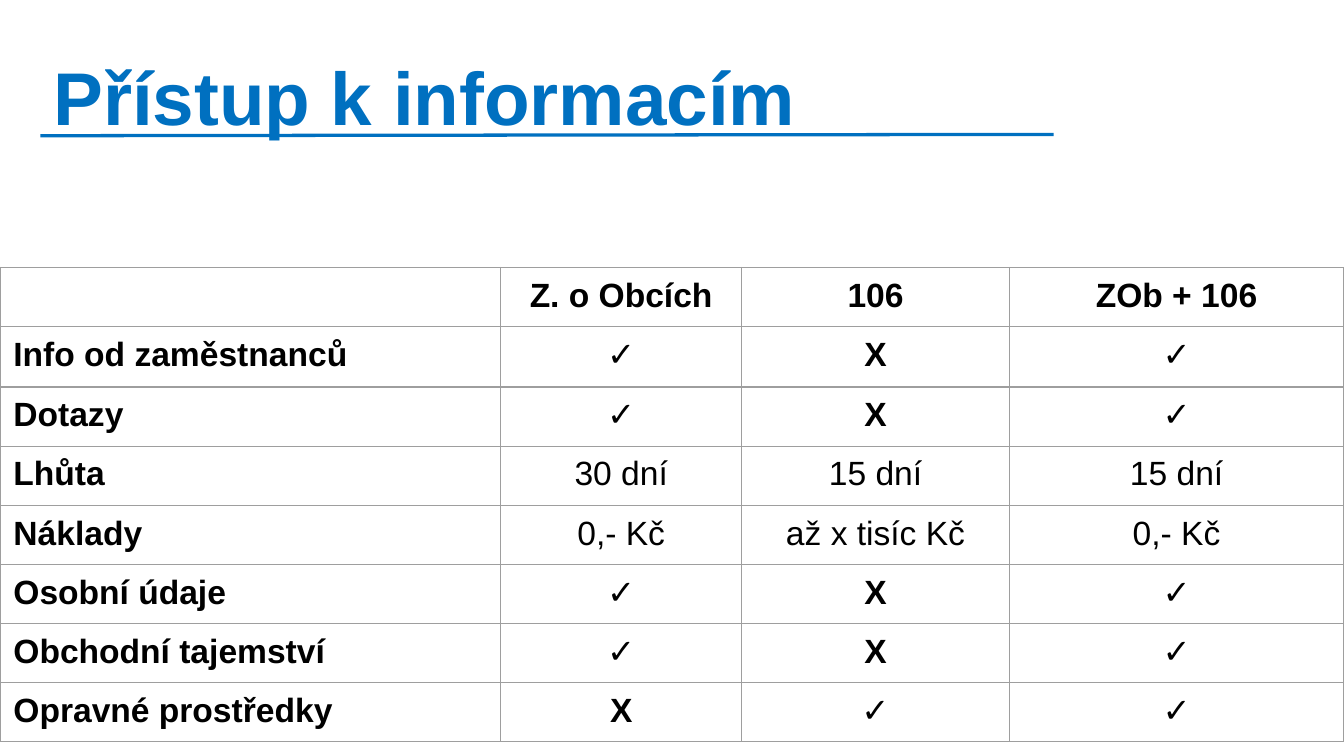
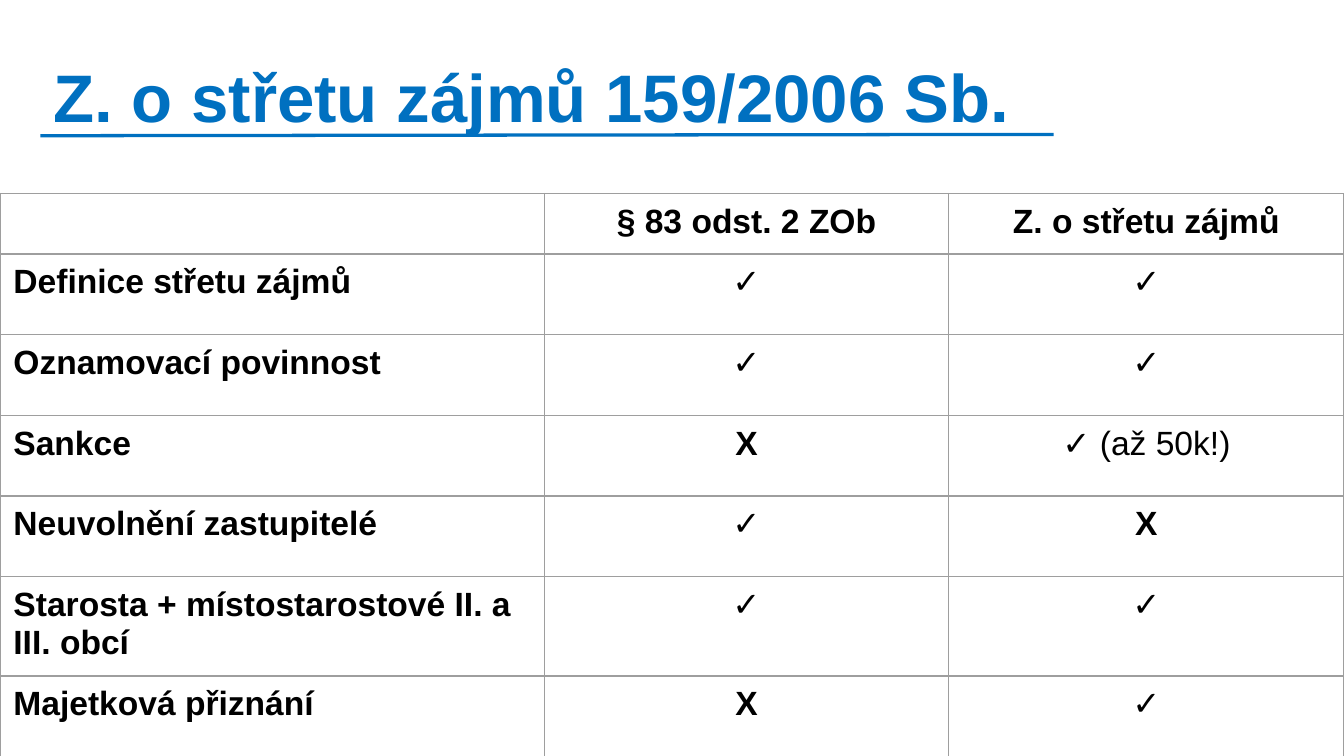
from dataclasses import dataclass
from typing import NamedTuple

from lxml.etree import SubElement
from pptx import Presentation
from pptx.dml.color import RGBColor
from pptx.enum.shapes import MSO_CONNECTOR
from pptx.enum.text import MSO_ANCHOR, PP_ALIGN
from pptx.oxml.ns import qn
from pptx.util import Pt

EMU_PER_PX = 4572  # 200 px to the inch


@dataclass(frozen=True)
class Theme:
    font: str = "Arial"
    accent: str = "0070C0"
    ink: str = "000000"
    paper: str = "FFFFFF"
    grid: str = "9E9E9E"
    title_size: int = 40
    long_title_size: int = 36
    cell_size: int = 18
    rule_width: float = 1.75
    grid_width: float = 0.75


class Span(NamedTuple):
    text: str
    bold: bool = True


THEME = Theme()
YES, NO = "✓", "X"

INFORMATION_ROWS = [
    ["", "Z. o Obcích", "106", "ZOb + 106"],
    ["Info od zaměstnanců", YES, NO, YES],
    ["Dotazy", YES, NO, YES],
    ["Lhůta", Span("30 dní", False), Span("15 dní", False), Span("15 dní", False)],
    ["Náklady", Span("0,- Kč", False), Span("až x tisíc Kč", False), Span("0,- Kč", False)],
    ["Osobní údaje", YES, NO, YES],
    ["Obchodní tajemství", YES, NO, YES],
    ["Opravné prostředky", NO, YES, YES],
]

CONFLICT_ROWS = [
    ["", "§ 83 odst. 2 ZOb", "Z. o střetu zájmů"],
    ["Definice střetu zájmů", YES, YES],
    ["Oznamovací povinnost", YES, YES],
    ["Sankce", NO, [Span(YES + " "), Span("(až 50k!)", False)]],
    ["Neuvolnění zastupitelé", YES, NO],
    ["Starosta + místostarostové II. a III. obcí", YES, YES],
    ["Majetková přiznání", NO, YES],
]


def px(length):
    return length * EMU_PER_PX


def color(code):
    return RGBColor.from_string(code)


def write_spans(para, spans, size, ink):
    """Add the spans, then give the paragraph end the same font and size."""
    for text, bold in spans:
        span = para.add_run()
        span.text = text
        span.font.name = THEME.font
        span.font.size = Pt(size)
        span.font.bold = bold
        span.font.color.rgb = color(ink)
    ending = SubElement(para._p, qn("a:endParaRPr"), sz=str(size * 100))
    SubElement(ending, qn("a:latin"), typeface=THEME.font)


def set_margins(target, side, end):
    target.margin_left = target.margin_right = px(side)
    target.margin_top = target.margin_bottom = px(end)


def add_page(deck, title, title_size):
    """Add a page with the underlined title that all pages share."""
    page = deck.slides.add_slide(deck.slide_layouts[6])
    page.background.fill.solid()
    page.background.fill.fore_color.rgb = color(THEME.paper)

    rule = page.shapes.add_connector(
        MSO_CONNECTOR.STRAIGHT, px(60), px(202), px(1568), px(200))
    rule.line.color.rgb = color(THEME.accent)
    rule.line.width = Pt(THEME.rule_width)
    SubElement(rule._element.spPr, qn("a:effectLst"))

    box = page.shapes.add_textbox(px(60), px(40), px(1464), px(204))
    frame = box.text_frame
    frame.word_wrap = True
    frame.vertical_anchor = MSO_ANCHOR.MIDDLE
    set_margins(frame, 20, 10)
    write_spans(frame.paragraphs[0], [Span(title)], title_size, THEME.accent)
    return page


def draw_borders(cell):
    properties = cell._tc.get_or_add_tcPr()
    for side in ("lnL", "lnR", "lnT", "lnB"):
        line = SubElement(properties, qn(f"a:{side}"), w=str(Pt(THEME.grid_width)))
        fill = SubElement(line, qn("a:solidFill"))
        SubElement(fill, qn("a:srgbClr"), val=THEME.grid)


def as_spans(content):
    if isinstance(content, str):
        return [Span(content)] if content else []
    return [content] if isinstance(content, Span) else content


def fill_cell(cell, content, centred):
    draw_borders(cell)
    cell.fill.solid()
    cell.fill.fore_color.rgb = color(THEME.paper)
    set_margins(cell, 20, 14)
    para = cell.text_frame.paragraphs[0]
    para.alignment = PP_ALIGN.CENTER if centred else PP_ALIGN.LEFT
    write_spans(para, as_spans(content), THEME.cell_size, THEME.ink)


def add_comparison(page, top, widths, heights, rows):
    """Add a full-width table with left-aligned labels and centred values."""
    table = page.shapes.add_table(
        len(rows), len(widths), 0, px(top), px(sum(widths)), px(sum(heights))).table
    table.first_row = table.horz_banding = False
    for column, width in zip(table.columns, widths):
        column.width = px(width)
    for index, (height, contents) in enumerate(zip(heights, rows)):
        table.rows[index].height = px(height)
        for position, content in enumerate(contents):
            fill_cell(table.cell(index, position), content, centred=position > 0)


def main():
    deck = Presentation()
    deck.slide_width, deck.slide_height = px(2000), px(1125)

    page = add_page(deck, "Přístup k informacím", THEME.title_size)
    add_comparison(page, 398, [745, 359, 398, 498], [62, 90] + [62] * 6, INFORMATION_ROWS)

    page = add_page(deck, "Z. o střetu zájmů 159/2006 Sb.", THEME.long_title_size)
    add_comparison(page, 288, [810, 602, 588], [90] + [120] * 6, CONFLICT_ROWS)

    deck.save("out.pptx")


if __name__ == "__main__":
    main()
